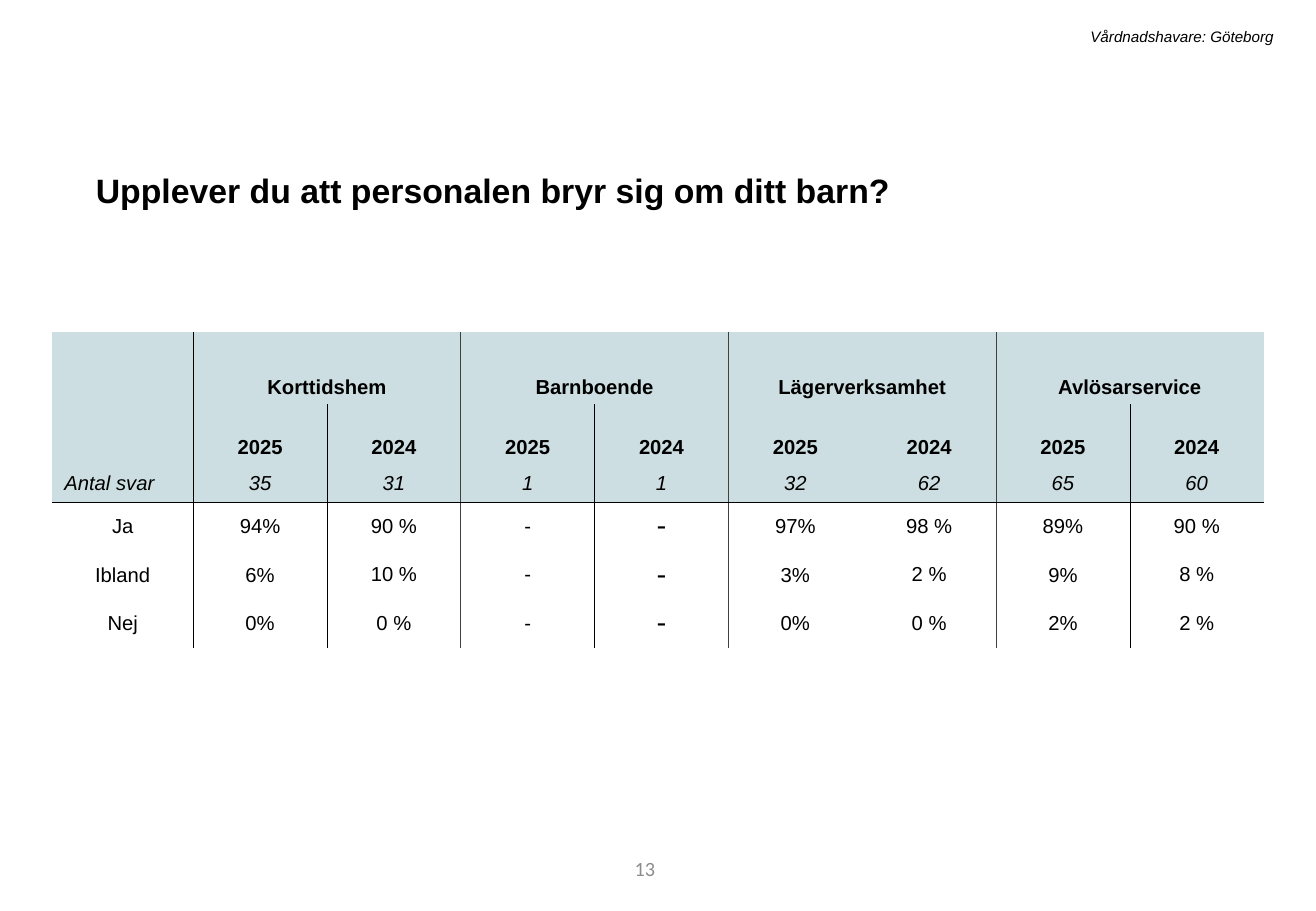
from dataclasses import dataclass
from typing import Optional

from lxml.etree import SubElement
from pptx import Presentation
from pptx.dml.color import RGBColor
from pptx.enum.text import MSO_ANCHOR, PP_ALIGN
from pptx.oxml.ns import qn
from pptx.util import Inches, Pt

SLIDE_WIDTH, SLIDE_HEIGHT = 10.83, 7.5
GRID_COLUMNS = GRID_ROWS = 100
COLORS = {"text": "000000", "muted": "8C8C8C", "header": "CCDEE1", "group": "404040"}
COLUMN_WIDTHS = [10.71] + [10.17] * 8
ROW_HEIGHTS = [8, 6.67, 4] + [5.33] * 3
HEADER_ROWS = 3
COUNT_ROW = 2
TIGHT_COLUMNS = {0, 1, 5, 7}
LARGE_DASH_COLUMN = 4
CONTENT = [
    ["", "Korttidshem", "", "Barnboende", "", "Lägerverksamhet", "", "Avlösarservice", ""],
    [""] + ["2025", "2024"] * 4,
    ["Antal svar", "35", "31", "1", "1", "32", "62", "65", "60"],
    ["Ja", "94%", "90 %", "-", "-", "97%", "98 %", "89%", "90 %"],
    ["Ibland", "6%", "10 %", "-", "-", "3%", "2 %", "9%", "8 %"],
    ["Nej", "0%", "0 %", "-", "-", "0%", "0 %", "2%", "2 %"],
]


@dataclass(frozen=True)
class TextStyle:
    """Font, alignment and spacing of one text."""
    size: float = 12
    font: str = "Arial"
    color: str = "text"
    bold: bool = False
    italic: bool = False
    align: PP_ALIGN = PP_ALIGN.CENTER
    line_spacing: Optional[float] = None
    space_before: Optional[float] = None


@dataclass(frozen=True)
class Label:
    """Text box placed in grid columns and rows."""
    text: str
    left: float
    top: float
    width: float
    height: float
    style: TextStyle
    anchor: MSO_ANCHOR = MSO_ANCHOR.TOP


@dataclass(frozen=True)
class Border:
    """Colour and width in points of a table line."""
    color: str = "text"
    width: float = 0.25


LABELS = [
    Label("13", 28.16, 92.67, 22.53, 5.33,
          TextStyle(font="Calibri", color="muted", align=PP_ALIGN.RIGHT), MSO_ANCHOR.MIDDLE),
    Label("Upplever du att personalen bryr sig om ditt barn?", 6.37, 17.07, 86.8, 6.27,
          TextStyle(20, bold=True, align=PP_ALIGN.LEFT, line_spacing=1.2, space_before=10)),
    Label("Vårdnadshavare: Göteborg", 15.88, 2.4, 81.81, 3.33,
          TextStyle(9, italic=True, align=PP_ALIGN.RIGHT)),
]
COLUMN_EDGES = {
    1: Border(), 2: Border(), 3: Border("group", 0.5), 4: Border(),
    5: Border("group"), 7: Border("group"), 8: Border(),
}


def across(columns: float) -> int:
    """Turn grid columns into a length."""
    return Inches(columns * SLIDE_WIDTH / GRID_COLUMNS)


def down(rows: float) -> int:
    """Turn grid rows into a length."""
    return Inches(rows * SLIDE_HEIGHT / GRID_ROWS)


def rgb(name: str) -> RGBColor:
    """Look up a named colour."""
    return RGBColor.from_string(COLORS[name])


def write(frame, text: str, style: TextStyle) -> None:
    """Put one styled paragraph into a text frame."""
    frame.text = text
    para = frame.paragraphs[0]
    para.alignment = style.align
    para.line_spacing = style.line_spacing
    if style.space_before is not None:
        para.space_before = Pt(style.space_before)
    for span in para.runs:
        span.font.name = style.font
        span.font.size = Pt(style.size)
        span.font.bold = style.bold
        span.font.italic = style.italic
        span.font.color.rgb = rgb(style.color)


def add_label(page, label: Label) -> None:
    """Draw a text box."""
    box = page.shapes.add_textbox(across(label.left), down(label.top),
                                  across(label.width), down(label.height))
    box.text_frame.word_wrap = True
    box.text_frame.vertical_anchor = label.anchor
    write(box.text_frame, label.text, label.style)


def set_border(cell, side: str, border: Optional[Border]) -> None:
    """Set or clear the line on one side of a cell."""
    properties = cell._tc.get_or_add_tcPr()
    line = SubElement(properties, qn(f"a:ln{side}"))
    if border is None:
        SubElement(line, qn("a:noFill"))
        return
    line.set("w", str(Pt(border.width)))
    fill = SubElement(line, qn("a:solidFill"))
    SubElement(fill, qn("a:srgbClr")).set("val", COLORS[border.color])


def column_edge(row: int, edge: int) -> Optional[Border]:
    """Give the vertical line at an edge; group titles have none inside."""
    if row == 0 and edge % 2 == 0:
        return None
    return COLUMN_EDGES.get(edge)


def cell_style(row: int, column: int) -> TextStyle:
    """Choose the text style for a table position."""
    if row < COUNT_ROW:
        return TextStyle(bold=True)
    if row == COUNT_ROW:
        return TextStyle(italic=True, align=PP_ALIGN.CENTER if column else PP_ALIGN.LEFT)
    if column == LARGE_DASH_COLUMN:
        return TextStyle(18, "Calibri")
    return TextStyle()


def format_cell(cell, row: int, column: int) -> None:
    """Fill one cell with text, lines and background."""
    span = cell.span_width if cell.is_merge_origin else 1
    set_border(cell, "L", column_edge(row, column))
    set_border(cell, "R", column_edge(row, column + span))
    set_border(cell, "T", Border() if row == HEADER_ROWS else None)
    set_border(cell, "B", Border() if row == HEADER_ROWS - 1 else None)
    if row < HEADER_ROWS:
        cell.fill.solid()
        cell.fill.fore_color.rgb = rgb("header")
    else:
        cell.fill.background()
    cell.vertical_anchor = MSO_ANCHOR.BOTTOM if row < COUNT_ROW else MSO_ANCHOR.MIDDLE
    if row >= HEADER_ROWS and column in TIGHT_COLUMNS:
        cell.margin_left = cell.margin_right = cell.margin_top = Inches(0.01)
        cell.margin_bottom = 0
    if CONTENT[row][column]:
        write(cell.text_frame, CONTENT[row][column], cell_style(row, column))


def add_answers(page) -> None:
    """Draw the table of answers by service and year."""
    table = page.shapes.add_table(
        len(ROW_HEIGHTS), len(COLUMN_WIDTHS), across(3.97), down(36.4),
        across(sum(COLUMN_WIDTHS)), down(sum(ROW_HEIGHTS))).table
    table.first_row = table.horz_banding = False
    for column, width in zip(table.columns, COLUMN_WIDTHS):
        column.width = across(width)
    for row, height in zip(table.rows, ROW_HEIGHTS):
        row.height = down(height)
    for start in range(1, len(COLUMN_WIDTHS), 2):
        table.cell(0, start).merge(table.cell(0, start + 1))
    for row in range(len(ROW_HEIGHTS)):
        for column in range(len(COLUMN_WIDTHS)):
            format_cell(table.cell(row, column), row, column)


def main() -> None:
    """Build and save the slide."""
    deck = Presentation()
    deck.slide_width, deck.slide_height = Inches(SLIDE_WIDTH), Inches(SLIDE_HEIGHT)
    page = deck.slides.add_slide(deck.slide_layouts[6])
    for label in LABELS:
        add_label(page, label)
    add_answers(page)
    deck.save("out.pptx")


if __name__ == "__main__":
    main()
